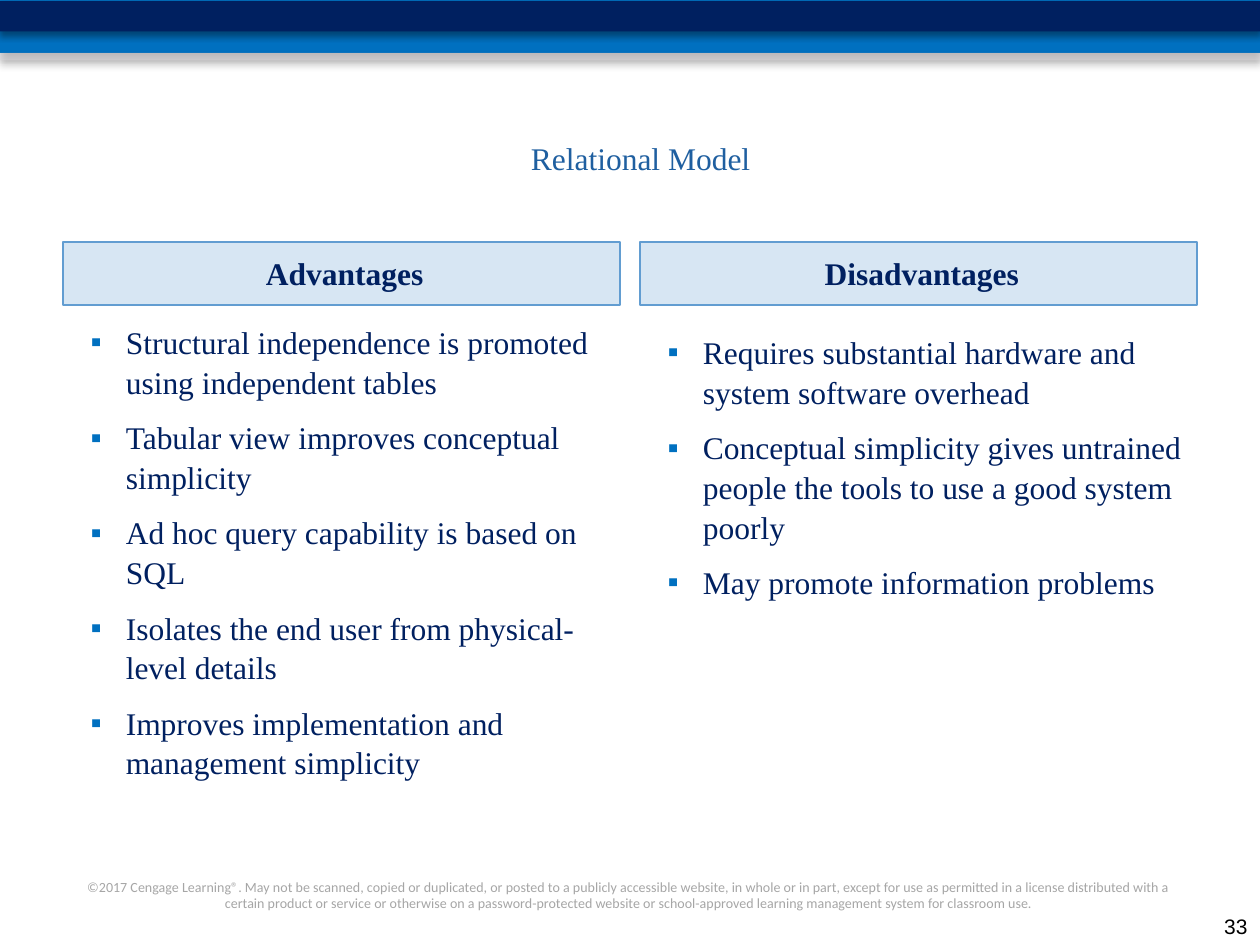
from dataclasses import dataclass

from lxml.etree import SubElement
from pptx import Presentation
from pptx.dml.color import RGBColor
from pptx.enum.shapes import MSO_SHAPE
from pptx.enum.text import MSO_ANCHOR, PP_ALIGN
from pptx.oxml.ns import qn
from pptx.util import Inches, Pt

SLIDE_W, SLIDE_H = 10, 7.5
MARGIN = 0.05 * SLIDE_W
GUTTER = 0.16
COLUMN_W = (SLIDE_W - 2 * MARGIN - GUTTER) / 2
HEADING_TOP, HEADING_H = 1.92, 0.5
LIST_H = 4.25
NAVY, BLUE, SKY = "002060", "0070C0", "629DD1"
SERIF = "Times New Roman"


@dataclass
class Band:
    top: float
    height: float
    color: str
    opacity: int = 100


@dataclass
class Column:
    heading: str
    list_top: float
    points: list[str]


BANDS = [
    Band(0, 0.42, BLUE),
    Band(0.01, 0.24, NAVY),
    Band(0.42, 0.06, "D8D3D9", 50),
]
COLUMNS = [
    Column("Advantages", 2.5, [
        "Structural independence is promoted using independent tables",
        "Tabular view improves conceptual simplicity",
        "Ad hoc query capability is based on SQL",
        "Isolates the end user from physical-level details",
        "Improves implementation and management simplicity",
    ]),
    Column("Disadvantages", 2.58, [
        "Requires substantial hardware and system software overhead",
        "Conceptual simplicity gives untrained people the tools to use a good system poorly",
        "May promote information problems",
    ]),
]
COPYRIGHT = (
    "©2017 Cengage Learning®. May not be scanned, copied or duplicated, or posted to a "
    "publicly accessible website, in whole or in part, except for use as permitted in a "
    "license distributed with a certain product or service or otherwise on a "
    "password-protected website or school-approved learning management system for "
    "classroom use."
)


def rgb(color: str) -> RGBColor:
    return RGBColor.from_string(color)


def inches(*lengths: float) -> list:
    return [Inches(length) for length in lengths]


def add_bullet(paragraph) -> None:
    properties = paragraph._p.get_or_add_pPr()
    properties.set("marL", str(Inches(0.4)))
    properties.set("indent", str(Inches(-0.28)))
    bullet_color = SubElement(properties, qn("a:buClr"))
    SubElement(bullet_color, qn("a:srgbClr"), val=BLUE)
    SubElement(properties, qn("a:buFont"), typeface="Arial")
    SubElement(properties, qn("a:buChar"), char="▪")


def write(frame, *lines: str, size=18, font=SERIF, color=NAVY, bold=False,
          align=PP_ALIGN.LEFT, anchor=MSO_ANCHOR.TOP, bullets=False) -> None:
    frame.word_wrap = True
    frame.vertical_anchor = anchor
    for index, line in enumerate(lines):
        paragraph = frame.add_paragraph() if index else frame.paragraphs[0]
        paragraph.text = line
        paragraph.alignment = align
        if bullets:
            paragraph.line_spacing = 1.05
            paragraph.space_before = Pt(3 if index else 0)
            paragraph.space_after = Pt(6)
            add_bullet(paragraph)
        paragraph.font.size = Pt(size)
        paragraph.font.name = font
        paragraph.font.bold = bold
        paragraph.font.color.rgb = rgb(color)


def add_rectangle(slide, left: float, top: float, width: float, height: float,
                  color: str, opacity: int = 100):
    rectangle = slide.shapes.add_shape(
        MSO_SHAPE.RECTANGLE, *inches(left, top, width, height))
    rectangle.shadow.inherit = False
    rectangle.fill.solid()
    rectangle.fill.fore_color.rgb = rgb(color)
    if opacity < 100:
        fill_color = rectangle._element.spPr.find(qn("a:solidFill"))[0]
        SubElement(fill_color, qn("a:alpha"), val=str(opacity * 1000))
    return rectangle


def draw_band(slide, band: Band) -> None:
    rectangle = add_rectangle(slide, 0, band.top, SLIDE_W, band.height,
                              band.color, band.opacity)
    rectangle.line.fill.background()
    effects = rectangle._element.spPr.find(qn("a:effectLst"))
    shadow = SubElement(effects, qn("a:outerShdw"), blurRad=str(Pt(4.1)),
                        dist=str(Pt(2)), dir="5400000", rotWithShape="0")
    shadow_color = SubElement(shadow, qn("a:srgbClr"), val="000000")
    SubElement(shadow_color, qn("a:alpha"), val="40000")


def draw_column(slide, column: Column, index: int) -> None:
    left = MARGIN + index * (COLUMN_W + GUTTER)
    heading = add_rectangle(slide, left, HEADING_TOP, COLUMN_W, HEADING_H, SKY, 25)
    heading.line.color.rgb = rgb(SKY)
    heading.line.width = Pt(1)
    heading.text_frame.margin_left = Inches(0.15)
    write(heading.text_frame, column.heading, bold=True,
          align=PP_ALIGN.CENTER, anchor=MSO_ANCHOR.MIDDLE)
    points = slide.shapes.add_textbox(*inches(left, column.list_top, COLUMN_W, LIST_H))
    write(points.text_frame, *column.points, bullets=True)


def main() -> None:
    deck = Presentation()
    deck.slide_width, deck.slide_height = inches(SLIDE_W, SLIDE_H)
    slide = deck.slides.add_slide(deck.slide_layouts[5])

    # Bands across the top
    for band in BANDS:
        draw_band(slide, band)

    # Title
    title = slide.shapes.title
    title.left, title.top, title.width, title.height = inches(MARGIN, 0.67, 9.17, 1.17)
    write(title.text_frame, "Relational Model", color="1F5FA0",
          align=PP_ALIGN.CENTER, anchor=MSO_ANCHOR.MIDDLE)

    # Compared columns
    for index, column in enumerate(COLUMNS):
        draw_column(slide, column, index)

    # Copyright line and page number
    footer = slide.shapes.add_textbox(*inches(0.58, 6.92, 8.83, 0.36))
    write(footer.text_frame, COPYRIGHT, size=8, font="Calibri", color="A6A6A6",
          align=PP_ALIGN.CENTER)
    page_number = slide.shapes.add_textbox(
        *inches(SLIDE_W - 0.5, SLIDE_H - 0.33, 0.5, 0.33))
    write(page_number.text_frame, "33", size=12, font="Arial", color="000000",
          align=PP_ALIGN.RIGHT, anchor=MSO_ANCHOR.BOTTOM)

    deck.save("out.pptx")


if __name__ == "__main__":
    main()
